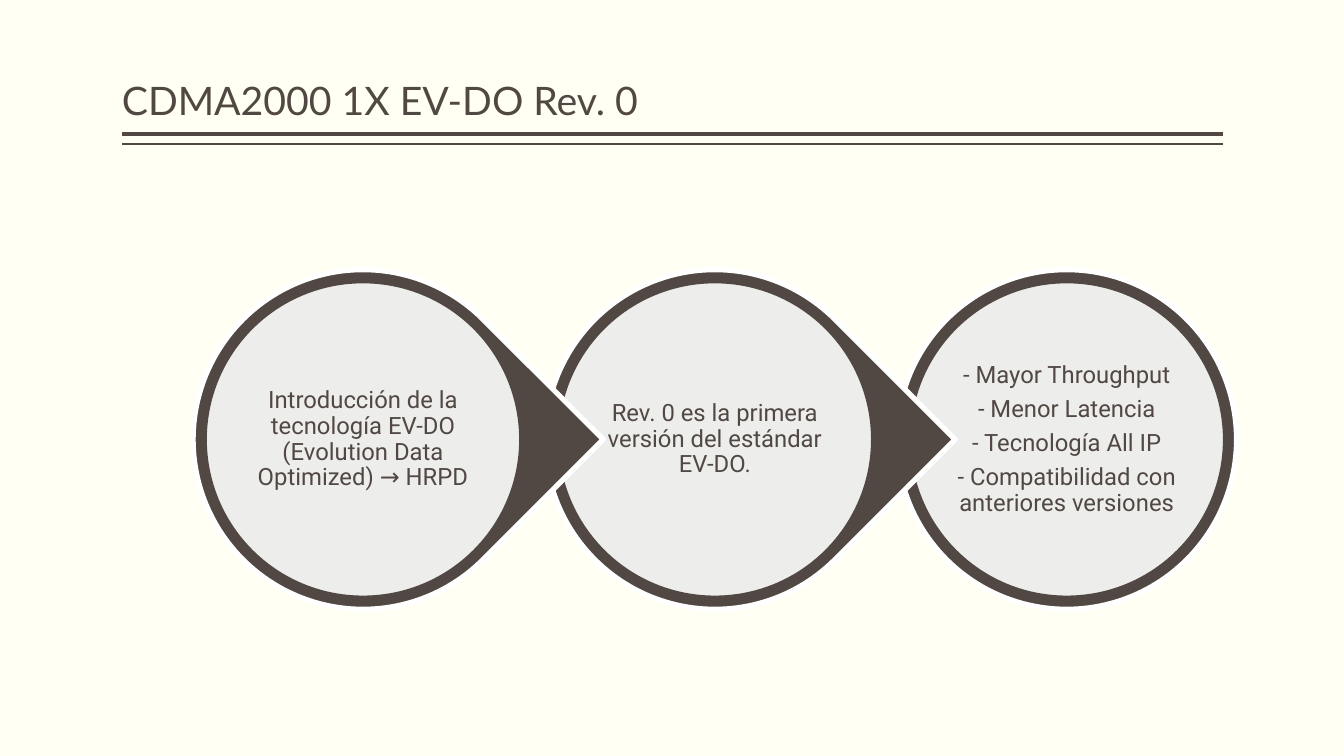
from lxml import etree
from pptx import Presentation
from pptx.dml.color import RGBColor
from pptx.enum import shapes, text
from pptx.oxml import ns
from pptx.util import Inches, Pt

TITLE = "CDMA2000 1X EV-DO Rev. 0"
STAGES = [
    ["Introducción de la tecnología EV-DO (Evolution Data Optimized) → HRPD"],
    ["Rev. 0 es la primera versión del estándar EV-DO."],
    ["- Mayor Throughput", "- Menor Latencia", "- Tecnología All IP",
     "- Compatibilidad con anteriores versiones"],
]
COLORS = {"paper": "FFFFF3", "brown": "514843", "white": "FFFFFF"}
RULES = [(1.33, 3), (1.43, 1)]  # height on the slide, line width
RULE_LEFT, RULE_RIGHT = 1.21, 12.13
FIRST_CENTER, STAGE_STEP, CENTER_Y = 3.6, 3.49, 4.36
OUTER, INNER, TEXT_BOX = 3.37, 3.15, 2.25
OUTLINE = 3.78


def color(name):
    return RGBColor.from_string(COLORS[name])


def add_run(paragraph, words, font, size):
    paragraph.line_spacing = 0.9
    run = paragraph.add_run()
    run.text = words
    run.font.name = font
    run.font.size = Pt(size)
    run.font.color.rgb = color("brown")


def centered(center_x, side):
    """Box of a square centred on the row of stages."""
    return (Inches(center_x - side / 2), Inches(CENTER_Y - side / 2),
            Inches(side), Inches(side))


def add_disc(slide, kind, center_x, side, fill, line):
    shape = slide.shapes.add_shape(kind, *centered(center_x, side))
    shape.shadow.inherit = False
    shape.fill.solid()
    shape.fill.fore_color.rgb = color(fill)
    shape.line.color.rgb = color(line)
    shape.line.width = Pt(OUTLINE)
    return shape


def add_stage(slide, center_x, paragraphs, is_last):
    kinds = shapes.MSO_SHAPE
    outer = add_disc(slide, kinds.OVAL if is_last else kinds.TEAR,
                     center_x, OUTER, "brown", "white")
    if not is_last:
        outer.rotation = 45
    inner = add_disc(slide, kinds.OVAL, center_x, INNER, "white", "brown")
    fill_color = inner._element.spPr.find(".//" + ns.qn("a:srgbClr"))
    etree.SubElement(fill_color, ns.qn("a:alpha"), val="90000")

    frame = slide.shapes.add_textbox(*centered(center_x, TEXT_BOX)).text_frame
    frame.word_wrap = True
    frame.vertical_anchor = text.MSO_ANCHOR.MIDDLE
    frame.margin_left = frame.margin_right = Inches(0.02)
    frame.margin_top = frame.margin_bottom = Inches(0.02)
    for index, words in enumerate(paragraphs):
        paragraph = frame.add_paragraph() if index else frame.paragraphs[0]
        paragraph.alignment = text.PP_ALIGN.CENTER
        paragraph.space_after = Pt(6)
        add_run(paragraph, words, "Roboto", 17)


def add_title(slide):
    title = slide.shapes.title
    title.left, title.top = Inches(RULE_LEFT), Inches(0.08)
    title.width, title.height = Inches(RULE_RIGHT - RULE_LEFT), Inches(1.2)
    frame = title.text_frame
    frame.word_wrap = True
    frame.auto_size = text.MSO_AUTO_SIZE.NONE
    frame.vertical_anchor = text.MSO_ANCHOR.BOTTOM
    frame.margin_left = frame.margin_right = 0
    frame.margin_top = frame.margin_bottom = Inches(0.05)
    frame.paragraphs[0].alignment = text.PP_ALIGN.LEFT
    add_run(frame.paragraphs[0], TITLE, "Lato", 28)


def add_rule(slide, y, width):
    rule = slide.shapes.add_connector(
        shapes.MSO_CONNECTOR.STRAIGHT,
        Inches(RULE_RIGHT), Inches(y), Inches(RULE_LEFT), Inches(y))
    rule.line.color.rgb = color("brown")
    rule.line.width = Pt(width)
    etree.SubElement(rule._element.spPr, ns.qn("a:effectLst"))


def main():
    presentation = Presentation()
    presentation.slide_width = Inches(13.33)
    presentation.slide_height = Inches(7.5)
    slide = presentation.slides.add_slide(presentation.slide_layouts[5])
    slide.background.fill.solid()
    slide.background.fill.fore_color.rgb = color("paper")

    for y, width in RULES:
        add_rule(slide, y, width)
    add_title(slide)
    # Right to left, so that each point lies over the next stage
    last = len(STAGES) - 1
    for index in range(last, -1, -1):
        add_stage(slide, FIRST_CENTER + index * STAGE_STEP,
                  STAGES[index], index == last)
    presentation.save("out.pptx")


if __name__ == "__main__":
    main()
